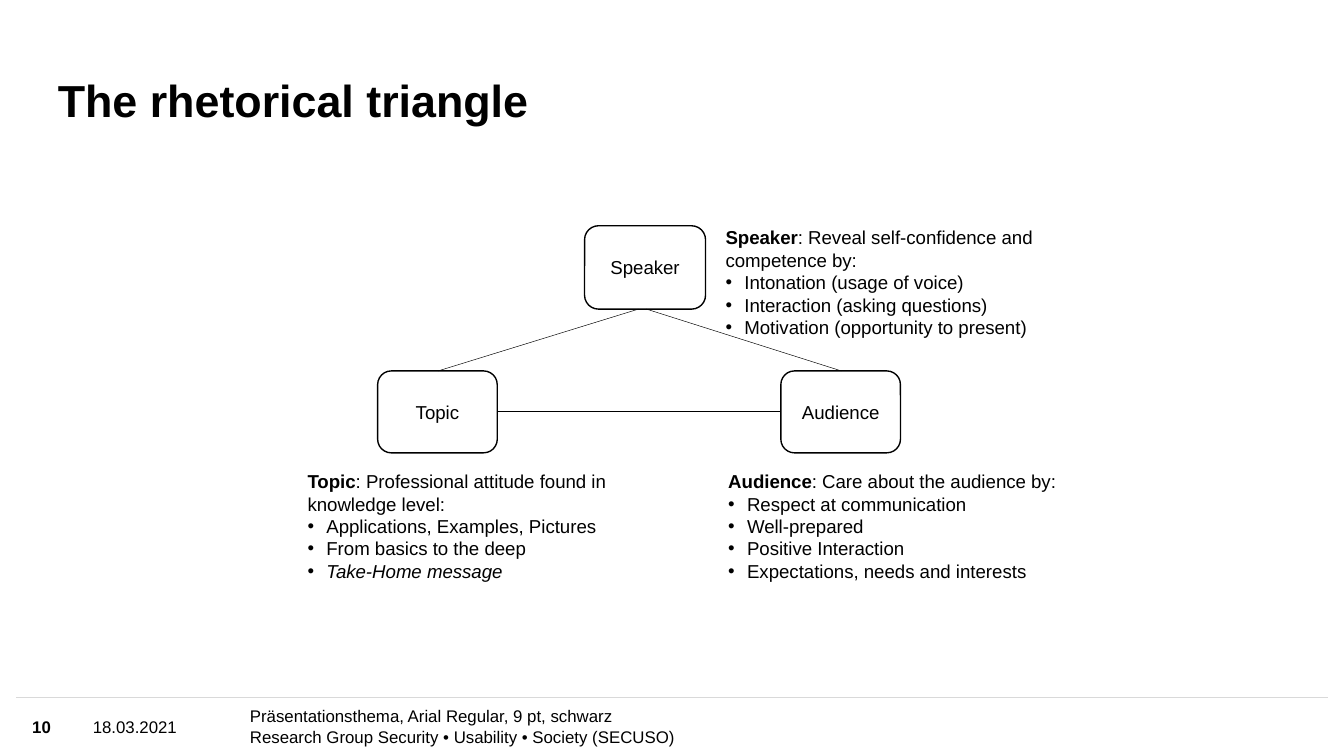
from dataclasses import dataclass

from lxml import etree
from pptx import Presentation
from pptx.dml.color import RGBColor
from pptx.enum import shapes, text
from pptx.oxml import ns
from pptx.util import Inches, Pt


@dataclass(frozen=True)
class Theme:
    font: str = "Arial"
    black: RGBColor = RGBColor(0, 0, 0)
    white: RGBColor = RGBColor(255, 255, 255)
    rule: RGBColor = RGBColor(0xD9, 0xD9, 0xD9)
    title: int = 24
    body: int = 10
    footer: int = 9


theme = Theme()


def style_text(shape, size, bold=None):
    """Format every run; a bold of None keeps the weight set on each run."""
    frame = shape.text_frame
    frame.word_wrap = True
    for paragraph in frame.paragraphs:
        for line_break in paragraph._p.findall(ns.qn("a:br")):
            etree.SubElement(line_break, ns.qn("a:rPr"), sz=str(size * 100))
        for run in paragraph.runs:
            run.font.name = theme.font
            run.font.size = Pt(size)
            run.font.color.rgb = theme.black
            if bold is not None:
                run.font.bold = bold


def add_line(start, end, color, width):
    line = slide.shapes.add_connector(
        shapes.MSO_CONNECTOR.STRAIGHT, *map(Inches, start + end))
    line.line.color.rgb = color
    line.line.width = Pt(width)
    etree.SubElement(line._element.spPr, ns.qn("a:effectLst"))


presentation = Presentation()
presentation.slide_width = Inches(10)
presentation.slide_height = Inches(10 * 9 / 16)
slide = presentation.slides.add_slide(presentation.slide_layouts[6])

# Footer and title
add_line((0.12, 5.19), (9.88, 5.19), theme.rule, 1)
middle, bottom = text.MSO_ANCHOR.MIDDLE, text.MSO_ANCHOR.BOTTOM
footer_text = ("Präsentationsthema, Arial Regular, 9 pt, schwarz\v"
               "Research Group Security • Usability • Society (SECUSO)")
labels = [
    (footer_text, (1.86, 5.19, 4.03, 0.43), theme.footer, False, middle),
    ("18.03.2021", (0.69, 5.19, 1.12, 0.43), theme.footer, False, middle),
    ("10", (0.24, 5.19, 0.36, 0.43), theme.footer, True, middle),
    ("The rhetorical triangle", (0.43, 0.32, 7.51, 0.63), theme.title, True, bottom),
]
for content, place, size, bold, anchor in labels:
    label = slide.shapes.add_textbox(*map(Inches, place))
    frame = label.text_frame
    frame.text = content
    frame.vertical_anchor = anchor
    frame.margin_left = frame.margin_right = 0
    frame.margin_top = frame.margin_bottom = 0
    style_text(label, size, bold)
label.text_frame.paragraphs[0].line_spacing = 0.9

# Notes beside the corners of the triangle
notes = [
    ("Speaker", ": Reveal self-confidence and competence by:",
     ["Intonation (usage of voice)", "Interaction (asking questions)",
      "Motivation (opportunity to present)"], (5.3, 1.58, 2.51, 1.04)),
    ("Topic", ": Professional attitude found in knowledge level:",
     ["Applications, Examples, Pictures", "From basics to the deep",
      "Take-Home message"], (2.19, 3.48, 2.43, 0.87)),
    ("Audience", ": Care about the audience by:",
     ["Respect at communication", "Well-prepared", "Positive Interaction",
      "Expectations, needs and interests"], (5.32, 3.48, 2.69, 0.87)),
]
for name, summary, points, place in notes:
    note = slide.shapes.add_shape(shapes.MSO_SHAPE.RECTANGLE, *map(Inches, place))
    note.shadow.inherit = False
    note.fill.solid()
    note.fill.fore_color.rgb = theme.white
    note.line.color.rgb = theme.white
    note.line.width = Pt(1)
    frame = note.text_frame
    frame.vertical_anchor = middle
    heading = frame.paragraphs[0]
    heading.text = name
    heading.runs[0].font.bold = True
    heading.add_run().text = summary
    for point in points:
        paragraph = frame.add_paragraph()
        paragraph.text = point
        paragraph.runs[0].font.italic = point == "Take-Home message"
        properties = paragraph._p.get_or_add_pPr()
        properties.set("marL", str(Inches(0.14)))
        properties.set("indent", str(-Inches(0.14)))
        etree.SubElement(properties, ns.qn("a:buFont"), typeface=theme.font)
        etree.SubElement(properties, ns.qn("a:buChar"), char="•")
    for paragraph in frame.paragraphs:
        paragraph.alignment = text.PP_ALIGN.LEFT
    style_text(note, theme.body)

# Corners of the triangle
corners = [
    ("Speaker", (4.35, 1.68, 0.9, 0.62)),
    ("Topic", (2.81, 2.76, 0.89, 0.61)),
    ("Audience", (5.81, 2.76, 0.89, 0.61)),
]
for name, place in corners:
    corner = slide.shapes.add_shape(
        shapes.MSO_SHAPE.ROUNDED_RECTANGLE, *map(Inches, place))
    corner.shadow.inherit = False
    corner.fill.solid()
    corner.fill.fore_color.rgb = theme.white
    corner.line.color.rgb = theme.black
    corner.line.width = Pt(0.75)
    corner.text_frame.text = name
    corner.text_frame.vertical_anchor = middle
    corner.text_frame.paragraphs[0].alignment = text.PP_ALIGN.CENTER
    style_text(corner, theme.body)

# Sides of the triangle
add_line((3.26, 2.76), (4.75, 2.3), theme.black, 0.25)
add_line((4.81, 2.3), (6.26, 2.76), theme.black, 0.25)
add_line((3.7, 3.06), (5.81, 3.06), theme.black, 0.5)

presentation.save("out.pptx")
